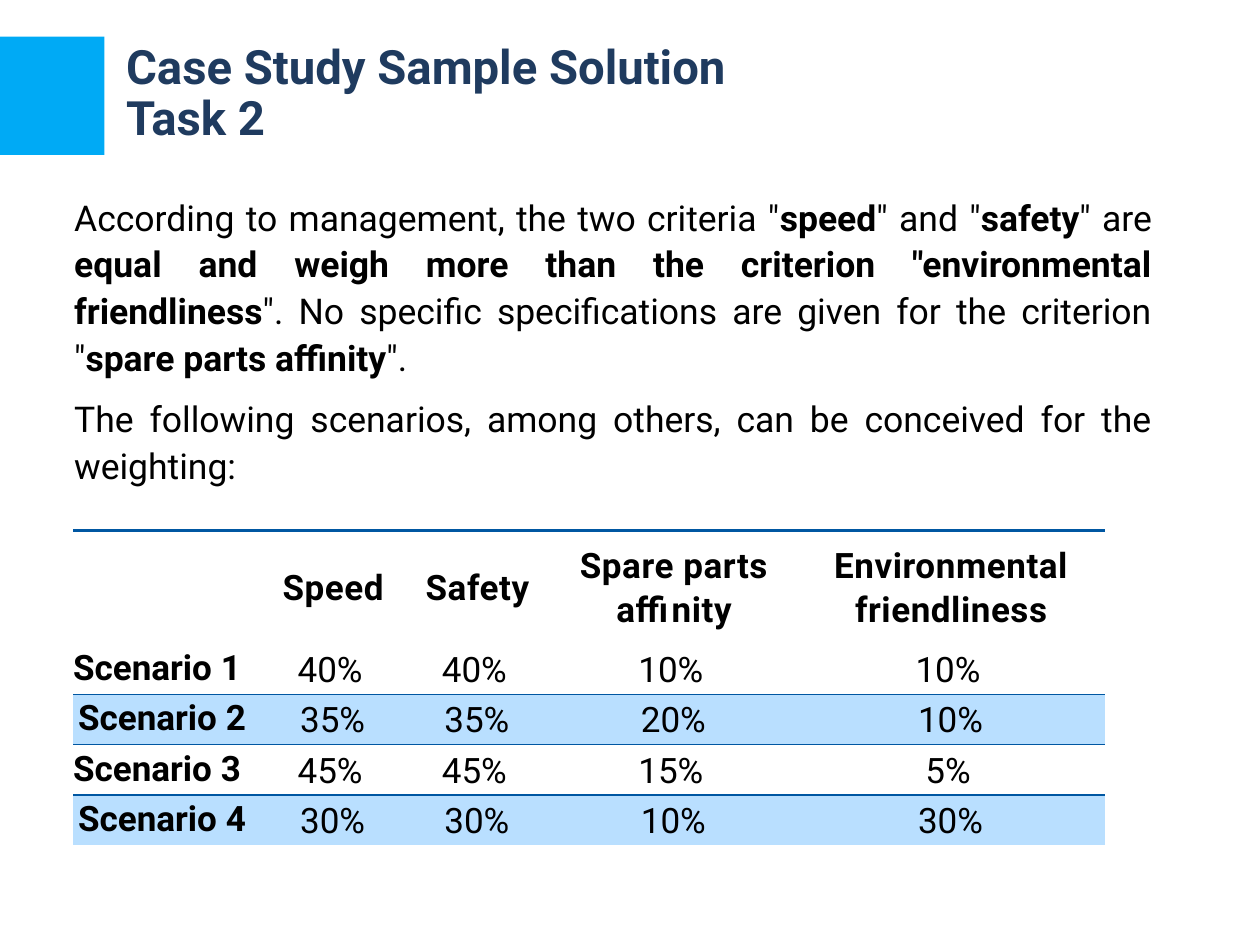
from lxml.etree import SubElement
from pptx import Presentation
from pptx.dml.color import RGBColor
from pptx.enum.shapes import MSO_SHAPE
from pptx.enum.text import MSO_ANCHOR, MSO_AUTO_SIZE, PP_ALIGN
from pptx.oxml import parse_xml
from pptx.oxml.ns import nsdecls, qn
from pptx.util import Inches, Pt

COLORS = {
    "accent": "00AAF5",
    "title": "1F3B5F",
    "text": "000000",
    "rule": "0057A2",
    "band": "B9DFFF",
}
FONT = "Roboto"
NO_STYLE_NO_GRID = "{2D5ABB26-0587-4C30-8999-92F81FD0307C}"


def add_run(paragraph, text, size, bold=False, color="text"):
    run = paragraph.add_run()
    run.text = text
    run.font.name = FONT
    run.font.size = Pt(size)
    run.font.bold = bold
    run.font.color.rgb = RGBColor.from_string(COLORS[color])
    return run


def add_top_border(cell, width):
    """Put a line in the rule colour on the cell's top edge, after its fill is set."""
    border = parse_xml(f'<a:lnT {nsdecls("a")} w="{Pt(width)}"/>')
    fill = SubElement(border, qn("a:solidFill"))
    SubElement(fill, qn("a:srgbClr"), val=COLORS["rule"])
    cell._tc.get_or_add_tcPr().insert(0, border)


presentation = Presentation()
presentation.slide_width = Inches(10)
presentation.slide_height = Inches(7.5)
slide = presentation.slides.add_slide(presentation.slide_layouts[5])

# Title with its accent block
block = slide.shapes.add_shape(
    MSO_SHAPE.RECTANGLE, Inches(0), Inches(0.29), Inches(0.83), Inches(0.94))
block.shadow.inherit = False
block.fill.solid()
block.fill.fore_color.rgb = RGBColor.from_string(COLORS["accent"])
block.line.fill.background()

title = slide.shapes.title
title.left, title.top = Inches(0.9), Inches(0.28)
title.width, title.height = Inches(6.3), Inches(0.95)
title_frame = title.text_frame
title_frame.auto_size = MSO_AUTO_SIZE.NONE
title_frame.vertical_anchor = MSO_ANCHOR.MIDDLE
paragraph = title_frame.paragraphs[0]
paragraph.alignment = PP_ALIGN.LEFT
paragraph.line_spacing = 0.9
add_run(paragraph, "Case Study Sample Solution", 27, True, "title")
paragraph.add_line_break()
add_run(paragraph, "Task 2", 27, True, "title")

# Introduction: regular and bold runs alternate, starting with regular
introduction = [
    ['According to management, the two criteria "', "speed", '" and "', "safety",
     '" are ', 'equal and weigh more than the criterion "environmental friendliness',
     '". No specific specifications are given for the criterion "',
     "spare parts affinity", '". '],
    ["The following scenarios, among others, can be conceived for the weighting:"],
]
text_box = slide.shapes.add_textbox(
    Inches(0.49), Inches(1.47), Inches(8.75), Inches(2.62))
text_frame = text_box.text_frame
text_frame.word_wrap = True
for index, texts in enumerate(introduction):
    paragraph = text_frame.add_paragraph() if index else text_frame.paragraphs[0]
    paragraph.alignment = PP_ALIGN.JUSTIFY
    paragraph.line_spacing = 1.1
    paragraph.space_after = Pt(8)
    for position, text in enumerate(texts):
        add_run(paragraph, text, 20.3, bold=position % 2 == 1)

# Weighting table
rows = [
    ["", "Speed", "Safety", "Spare parts affinity", "Environmental friendliness"],
    ["Scenario 1", "40%", "40%", "10%", "10%"],
    ["Scenario 2", "35%", "35%", "20%", "10%"],
    ["Scenario 3", "45%", "45%", "15%", "5%"],
    ["Scenario 4", "30%", "30%", "10%", "30%"],
]
column_widths = [1.5, 1.14, 1.15, 1.97, 2.43]
table = slide.shapes.add_table(
    len(rows), len(column_widths),
    Inches(0.58), Inches(4.21), Inches(8.19), Inches(2.5)).table
table.first_row = False
table.horz_banding = False
table._tbl.tblPr.find(qn("a:tableStyleId")).text = NO_STYLE_NO_GRID
for column, width in zip(table.columns, column_widths):
    column.width = Inches(width)

for row_index, values in enumerate(rows):
    header = row_index == 0
    banded = not header and row_index % 2 == 0
    table.rows[row_index].height = Inches(0.9 if header else 0.4)
    for column_index, value in enumerate(values):
        cell = table.cell(row_index, column_index)
        label = column_index == 0
        cell.margin_left = Inches(0.04 if banded else 0)
        cell.margin_right = Inches(0.01 if header else 0.06)
        cell.margin_top = cell.margin_bottom = Inches(0.01)
        cell.vertical_anchor = MSO_ANCHOR.TOP if label else MSO_ANCHOR.MIDDLE
        if banded:
            cell.fill.solid()
            cell.fill.fore_color.rgb = RGBColor.from_string(COLORS["band"])
        else:
            cell.fill.background()
        if header or banded:
            add_top_border(cell, 1.5 if header else 0.75)
        if value:
            paragraph = cell.text_frame.paragraphs[0]
            paragraph.alignment = PP_ALIGN.LEFT if label else PP_ALIGN.CENTER
            paragraph.line_spacing = 1.07
            paragraph.space_after = Pt(8)
            run = add_run(paragraph, value, 20, bold=header or label)
            if header:
                run.font._element.set("spc", "30")

presentation.save("out.pptx")
